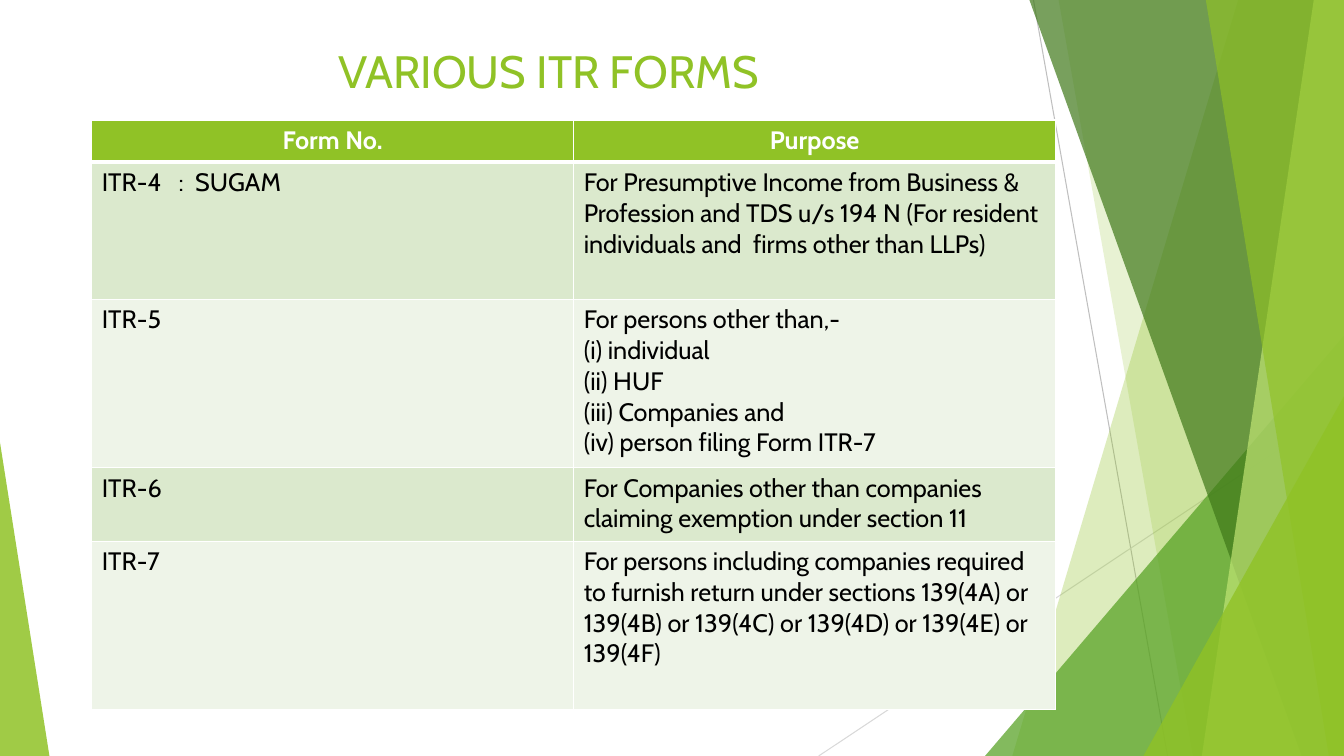
from pptx import Presentation, util as u
from pptx.dml.color import RGBColor
from pptx.enum import shapes, text
from pptx.oxml import parse_xml
from pptx.oxml.ns import nsdecls, qn

PX = 9144  # 100 px to the inch
W, H = 1333, 750
THEME = dict(font="Cabin", title=32.4, body=18, lime="90C226", green="54A021",
             forest="3F7819", pale="C0E474", white="FFFFFF", black="000000",
             band=("DBE9CD", "EEF4E8"))

prs = Presentation()
prs.slide_width, prs.slide_height = W * PX, H * PX
s = prs.slides.add_slide(prs.slide_layouts[6])


def style(p, size, color, bold=False, align=text.PP_ALIGN.LEFT):
    p.alignment = align
    for r in p.runs:
        r.font.name, r.font.size, r.font.bold = THEME["font"], u.Pt(size), bold
        r.font.color.rgb = RGBColor.from_string(color)


def border(tc_pr, side, width):
    ln = parse_xml(f'<a:{side} {nsdecls("a")} w="{u.Pt(width)}"><a:solidFill>'
                   f'<a:srgbClr val="{THEME["white"]}"/></a:solidFill></a:{side}>')
    tc_pr.append(ln)


# Thin background lines
for x1, y1, x2, y2, color in [(1025, 0, 1158, H, "BFBFBF"), (W, 403, 812, H, "D9D9D9")]:
    cn = s.shapes.add_connector(shapes.MSO_CONNECTOR.STRAIGHT, x1 * PX, y1 * PX, x2 * PX, y2 * PX)
    cn.line.color.rgb = RGBColor.from_string(color)
    cn.line.width = u.Pt(0.75)
    cn._element.spPr.append(parse_xml(f'<a:effectLst {nsdecls("a")}/>'))

# Translucent facets, back to front: bands as (top x, bottom x) running to the
# right edge, triangles as (left, top, width, apex) standing on the bottom edge
facets = [
    ((1228, 1004), "lime", 30),
    ((1050, 1183), "lime", 20),
    ((977, 333, 356, 1), "green", 72),
    ((1021, 1291), "forest", 70),
    ((1303, 1192), "pale", 70),
    ((1196, 1318), "lime", 65),
    ((1134, 393, 199, 1), "lime", 80),
    ((0, 439, 49, 0), "lime", 85),
]
for place, color, alpha in facets:
    if len(place) == 2:
        top, bottom = place
        fb = s.shapes.build_freeform(top, 0, PX)
        fb.add_line_segments([(W, 0), (W, H), (bottom, H)], close=True)
        sp = fb.convert_to_shape()
    else:
        x, y, w, apex = place
        sp = s.shapes.add_shape(shapes.MSO_SHAPE.ISOSCELES_TRIANGLE,
                                x * PX, y * PX, w * PX, (H - y) * PX)
        sp.adjustments[0] = apex
    sp.shadow.inherit = False
    sp.line.fill.background()
    sp.fill.solid()
    sp.fill.fore_color.rgb = RGBColor.from_string(THEME[color])
    clr = sp._element.spPr.find(qn("a:solidFill"))[0]
    clr.append(parse_xml(f'<a:alpha {nsdecls("a")} val="{alpha * 1000}"/>'))

# Title
tf = s.shapes.add_textbox(74 * PX, 37 * PX, 940 * PX, 66 * PX).text_frame
tf.word_wrap = True
tf.vertical_anchor = text.MSO_ANCHOR.MIDDLE
tf.text = "VARIOUS ITR FORMS"
style(tf.paragraphs[0], THEME["title"], THEME["lime"], align=text.PP_ALIGN.CENTER)

# Table of forms: row height, form, purpose
rows = [
    (42, "Form No.", "Purpose"),
    (136, "ITR-4   :  SUGAM",
     "For Presumptive Income from Business & Profession and TDS u/s 194 N "
     "(For resident individuals and  firms other than LLPs)"),
    (167, "ITR-5",
     "For persons other than,-\n(i) individual\n(ii) HUF\n"
     "(iii) Companies and\n(iv) person filing Form ITR-7"),
    (73, "ITR-6", "For Companies other than companies claiming exemption under section 11"),
    (167, "ITR-7",
     "For persons including companies required to furnish return under sections "
     "139(4A) or 139(4B) or 139(4C) or 139(4D) or 139(4E) or 139(4F)"),
]
height = sum(row[0] for row in rows)
tbl = s.shapes.add_table(len(rows), 2, 91 * PX, 119 * PX, 956 * PX, height * PX).table
for i, (row_height, *words) in enumerate(rows):
    tbl.rows[i].height = row_height * PX
    head = i == 0
    for j, word in enumerate(words):
        cell = tbl.cell(i, j)
        cell.text_frame.text = word
        for p in cell.text_frame.paragraphs:
            if head:
                style(p, THEME["body"], THEME["white"], True, text.PP_ALIGN.CENTER)
            else:
                style(p, THEME["body"], THEME["black"])
        tc_pr = cell._tc.get_or_add_tcPr()
        for side in ("lnL", "lnR", "lnT", "lnB"):
            thick = (head and side == "lnB") or (i == 1 and side == "lnT")
            border(tc_pr, side, 3 if thick else 1)
        cell.fill.solid()
        fill = THEME["lime"] if head else THEME["band"][(i - 1) % 2]
        cell.fill.fore_color.rgb = RGBColor.from_string(fill)

prs.save("out.pptx")
